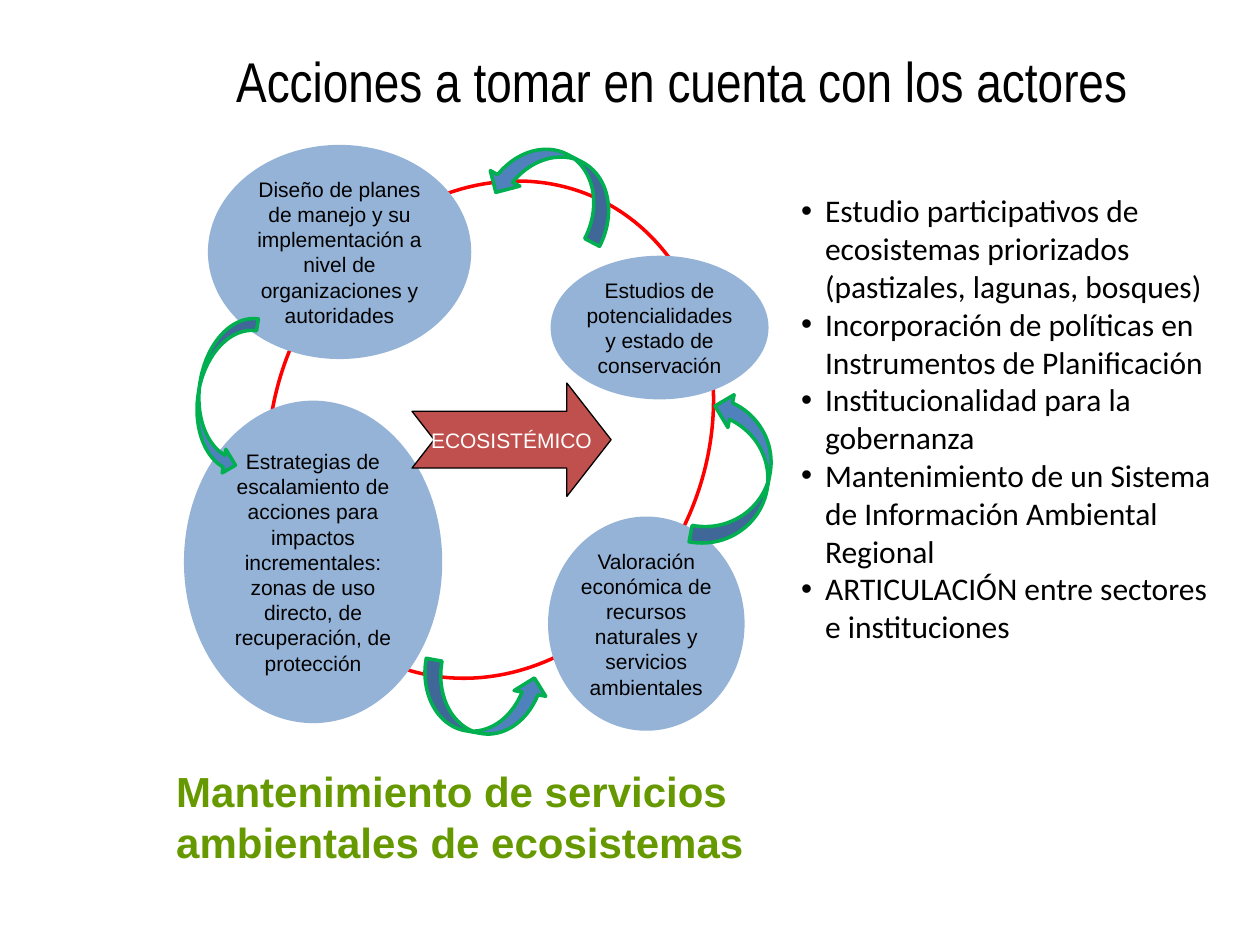
from dataclasses import dataclass

from lxml.etree import SubElement
from pptx import Presentation
from pptx.dml.color import RGBColor
from pptx.enum.shapes import MSO_SHAPE
from pptx.enum.text import MSO_ANCHOR, PP_ALIGN
from pptx.oxml.ns import qn
from pptx.shapes.autoshape import Shape
from pptx.slide import Slide
from pptx.util import Inches, Pt


@dataclass
class Box:
    left: float
    top: float
    width: float
    height: float

    def lengths(self) -> list:
        """Return the position and size as slide lengths."""
        return [Inches(n) for n in (self.left, self.top, self.width, self.height)]


@dataclass
class Action:
    box: Box
    label: str


@dataclass
class CycleArrow:
    box: Box
    rotation: float


BLACK = "000000"
ACTIONS = [
    Action(Box(1.65, 1.15, 2.09, 1.7),
           "Diseño de planes de manejo y su implementación a nivel de organizaciones y autoridades"),
    Action(Box(4.37, 2.03, 1.73, 1.14), "Estudios de potencialidades y estado de conservación"),
    Action(Box(1.46, 3.18, 2.05, 2.56),
           "Estrategias de escalamiento de acciones para impactos incrementales: "
           "zonas de uso directo, de recuperación, de protección"),
    Action(Box(4.35, 4.1, 1.56, 1.7),
           "Valoración económica de recursos naturales y servicios ambientales"),
]
CYCLE_ARROWS = [
    CycleArrow(Box(5.23, 3.48, 1.23, 0.53), 280.8),
    CycleArrow(Box(3.88, 1.21, 1.06, 0.53), 207.5),
    CycleArrow(Box(3.33, 5.31, 1, 0.51), 10.3),
    CycleArrow(Box(1.13, 2.94, 1.27, 0.38), 98.9),
]
MEASURES = [
    "Estudio participativos de ecosistemas priorizados (pastizales, lagunas, bosques)",
    "Incorporación de políticas en Instrumentos de Planificación",
    "Institucionalidad para la gobernanza",
    "Mantenimiento de un Sistema de Información Ambiental Regional",
    "ARTICULACIÓN entre sectores e instituciones",
]


def color(value: str) -> RGBColor:
    """Turn a hex string into a colour."""
    return RGBColor.from_string(value)


def add_figure(slide: Slide, preset: MSO_SHAPE, box: Box, fill: str = "",
               line: str = "", line_width: float = 2, rotation: float = 0) -> Shape:
    """Draw a preset shape, with fill and line only where given."""
    figure = slide.shapes.add_shape(preset, *box.lengths())
    figure.shadow.inherit = False
    figure.rotation = rotation
    if fill:
        figure.fill.solid()
        figure.fill.fore_color.rgb = color(fill)
    else:
        figure.fill.background()
    if line:
        figure.line.color.rgb = color(line)
        figure.line.width = Pt(line_width)
    else:
        figure.line.fill.background()
    return figure


def write(shape: Shape, text: str, size: float, font: str = "Arial", ink: str = BLACK,
          align: PP_ALIGN = PP_ALIGN.CENTER, anchor: MSO_ANCHOR = MSO_ANCHOR.MIDDLE,
          bold: bool = False, wrap: bool = True, bullet: str = "") -> None:
    """Fill a shape with paragraphs in one style."""
    frame = shape.text_frame
    frame.word_wrap = wrap
    frame.vertical_anchor = anchor
    frame.text = text
    for paragraph in frame.paragraphs:
        paragraph.alignment = align
        if bullet:
            properties = paragraph._p.get_or_add_pPr()
            properties.set("marL", str(Inches(0.19)))
            properties.set("indent", str(Inches(-0.19)))
            SubElement(properties, qn("a:buFont")).set("typeface", "Arial")
            SubElement(properties, qn("a:buChar")).set("char", bullet)
        for run in paragraph.runs:
            run.font.name = font
            run.font.size = Pt(size)
            run.font.bold = bold
            run.font.color.rgb = color(ink)


def add_action(slide: Slide, action: Action) -> None:
    """Draw one action of the cycle as a labelled ellipse."""
    ellipse = add_figure(slide, MSO_SHAPE.OVAL, action.box, "95B3D7")
    frame = ellipse.text_frame
    frame.margin_left = frame.margin_right = frame.margin_top = frame.margin_bottom = 0
    write(ellipse, action.label, 12)


def main() -> None:
    """Build the slide and save it."""
    deck = Presentation()
    deck.slide_width, deck.slide_height = Inches(10), Inches(7.5)
    slide = deck.slides.add_slide(deck.slide_layouts[6])

    title = slide.shapes.add_textbox(*Box(0.83, 0.36, 9.17, 0.55).lengths())
    write(title, "Acciones a tomar en cuenta con los actores", 32, "Arial Narrow")
    goal = slide.shapes.add_textbox(*Box(1.3, 6.03, 4.88, 0.91).lengths())
    write(goal, "Mantenimiento de servicios ambientales de ecosistemas", 24, ink="669900",
          align=PP_ALIGN.LEFT, anchor=MSO_ANCHOR.TOP, bold=True)

    add_figure(slide, MSO_SHAPE.OVAL, Box(2.18, 1.39, 3.43, 4.04), line="FF0000", rotation=23.9)
    for action in ACTIONS:
        add_action(slide, action)
    for arrow in CYCLE_ARROWS:
        add_figure(slide, MSO_SHAPE.CURVED_UP_ARROW, arrow.box, "4F81BD", "00B050",
                   rotation=arrow.rotation)

    approach = add_figure(slide, MSO_SHAPE.NOTCHED_RIGHT_ARROW, Box(3.27, 3.04, 1.58, 0.9),
                          "C0504D", BLACK, 0.75)
    approach.adjustments[0], approach.adjustments[1] = 0.5, 0.39
    write(approach, "ECOSISTÉMICO", 12, ink="FFFFFF", wrap=False)

    measures = slide.shapes.add_textbox(*Box(6.26, 1.47, 3.5, 3.74).lengths())
    write(measures, "\n".join(MEASURES), 18, "Calibri", align=PP_ALIGN.LEFT,
          anchor=MSO_ANCHOR.TOP, bullet="•")

    deck.save("out.pptx")


if __name__ == "__main__":
    main()
